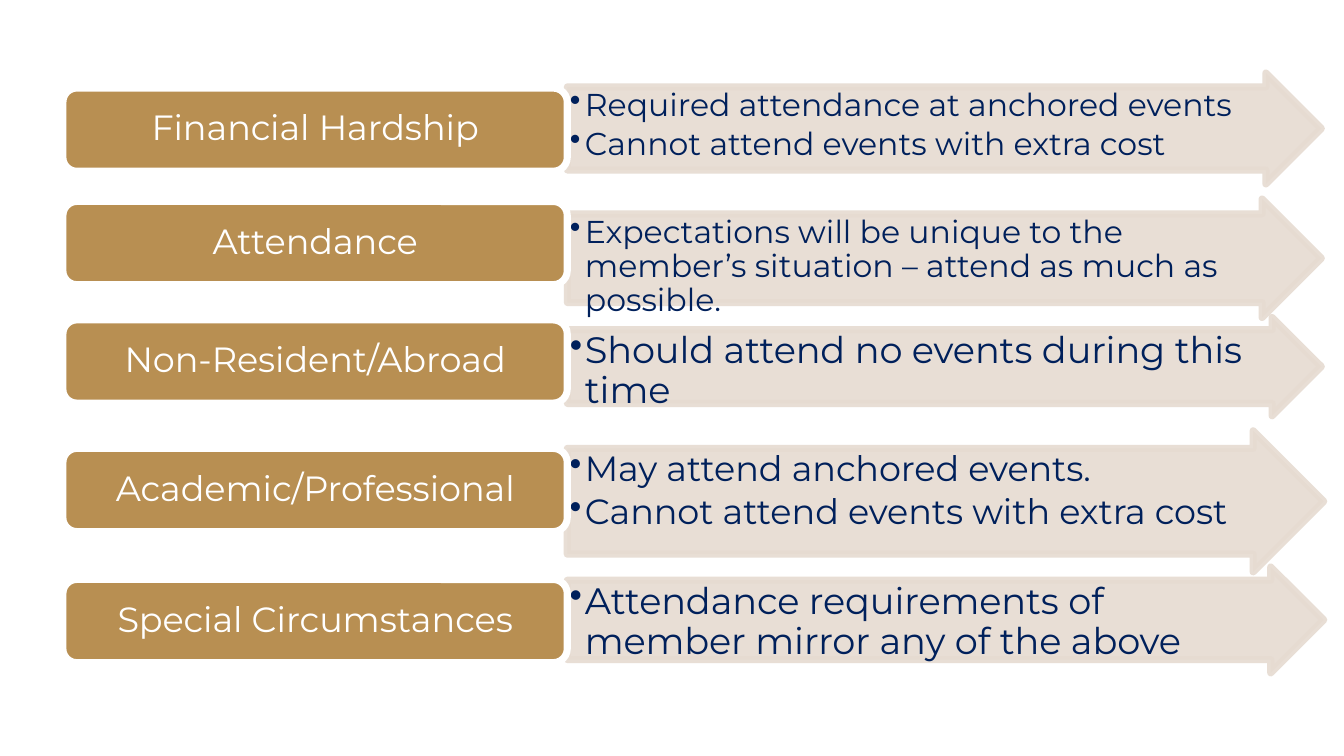
"""Build a slide that pairs each member status with its attendance rules."""
from lxml import etree
from pptx import Presentation
from pptx.dml.color import RGBColor
from pptx.enum.shapes import MSO_SHAPE
from pptx.enum.text import MSO_ANCHOR, PP_ALIGN
from pptx.oxml.ns import qn
from pptx.util import Inches, Pt

ARROW, ROUND = MSO_SHAPE.RIGHT_ARROW, MSO_SHAPE.ROUNDED_RECTANGLE
TOP, MIDDLE = MSO_ANCHOR.TOP, MSO_ANCHOR.MIDDLE
LEFT, CENTER = PP_ALIGN.LEFT, PP_ALIGN.CENTER
COLORS = {"sand": "E6DBD1", "gold": "B88F52", "navy": "00205B", "white": "FFFFFF"}

ROWS = [
    ("Financial Hardship", 0.35, 0.29, 2.99, 0.44, 9,
     ["Required attendance at anchored events", "Cannot attend events with extra cost"]),
    ("Attendance", 0.8, 0.79, 2.99, 0.47, 9,
     ["Expectations will be unique to the member’s situation – attend as much as possible."]),
    ("Non-Resident/Abroad", 1.27, 1.26, 2.99, 0.39, 10.5,
     ["Should attend no events during this time"]),
    ("Academic/Professional", 1.78, 1.71, 3, 0.56, 10,
     ["May attend anchored events.", "Cannot attend events with extra cost"]),
    ("Special Circumstances", 2.3, 2.25, 3, 0.42, 10.5,
     ["Attendance requirements of member mirror any of the above"]),
]


def add_block(kind, box, fill, line, anchor, pads):
    shape = slide.shapes.add_shape(kind, *[Inches(n) for n in box])
    shape.shadow.inherit = False
    shape.fill.solid()
    shape.fill.fore_color.rgb = RGBColor.from_string(COLORS[fill])
    shape.line.color.rgb = RGBColor.from_string(COLORS[line])
    shape.line.width = Pt(2)
    frame = shape.text_frame
    frame.word_wrap = True
    frame.vertical_anchor = anchor
    frame.margin_left, frame.margin_top, frame.margin_right, frame.margin_bottom = [
        Inches(n) for n in pads]
    return shape


def add_text(frame, lines, size, color, align, bullet):
    for i, text in enumerate(lines):
        para = frame.add_paragraph() if i else frame.paragraphs[0]
        para.alignment = align
        para.line_spacing = 0.9
        if bullet:
            para.level = 1
            para.space_after = Pt(size * 0.15)
            props = para._p.get_or_add_pPr()
            props.set("marL", str(Inches(0.06)))
            props.set("indent", str(-Inches(0.06)))
            etree.SubElement(props, qn("a:buChar"), char="•")
        run = para.add_run()
        run.text = text
        run.font.name = "Montserrat"
        run.font.size = Pt(size)
        run.font.color.rgb = RGBColor.from_string(COLORS[color])


deck = Presentation()
deck.slide_width, deck.slide_height = Inches(5.33), Inches(3)
slide = deck.slides.add_slide(deck.slide_layouts[6])

for label, top, tip, width, height, size, rules in ROWS:
    arrow = add_block(ARROW, (2.25, tip, width, height), "sand", "sand", TOP,
                      (0.01, 0.01, 0.01 + height / 4, 0.01))
    arrow.adjustments[0], arrow.adjustments[1] = 0.75, 0.5
    for tint in arrow._element.spPr.iter(qn("a:srgbClr")):
        etree.SubElement(tint, qn("a:alpha"), val="90000")
    add_text(arrow.text_frame, rules, size, "navy", LEFT, True)

    tag = add_block(ROUND, (0.25, top, 2, 0.33), "gold", "white", MIDDLE,
                    (0.04, 0.02, 0.04, 0.02))
    add_text(tag.text_frame, [label], 10, "white", CENTER, False)

deck.save("out.pptx")
